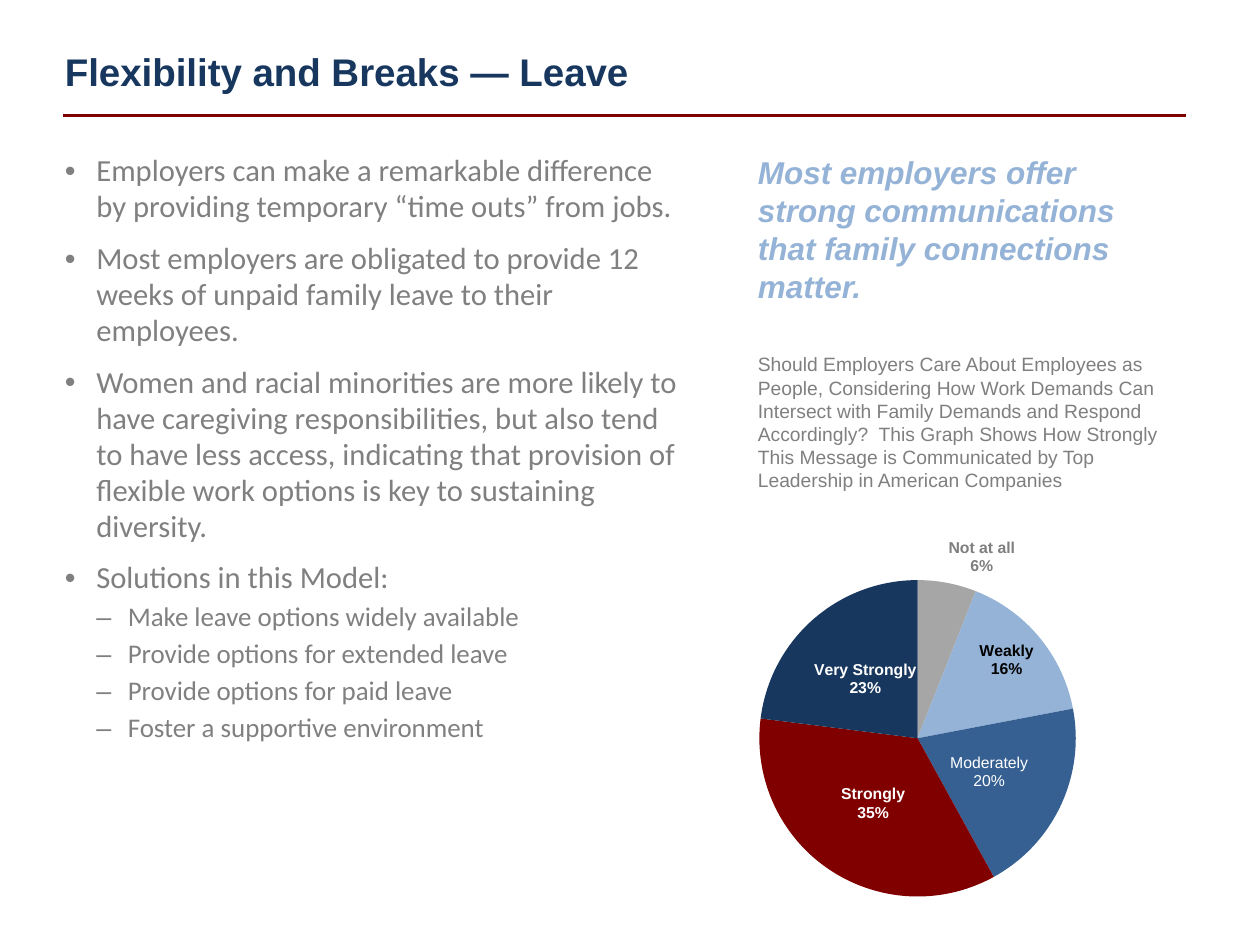
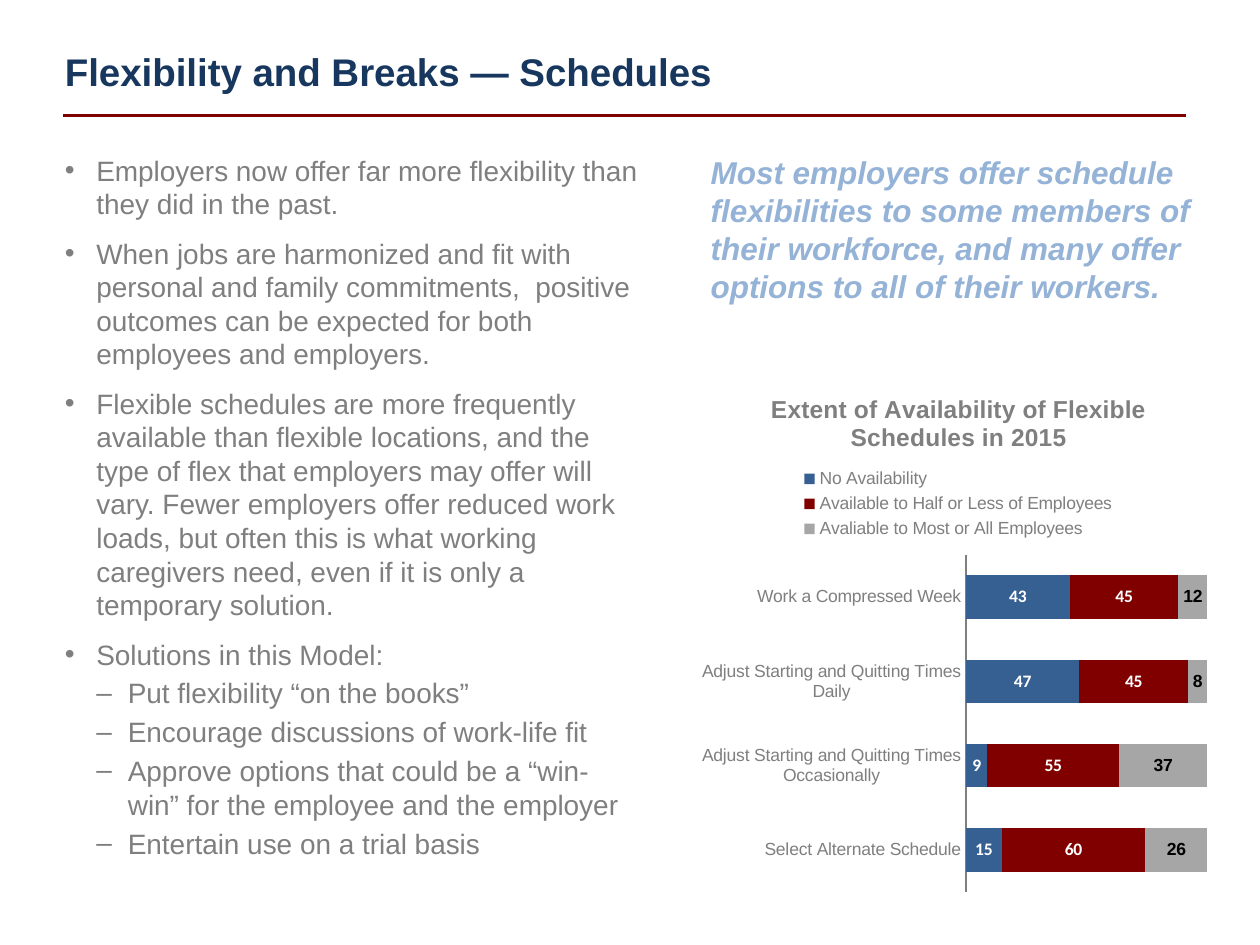
from lxml import etree
from pptx import Presentation
from pptx.chart.data import CategoryChartData
from pptx.dml.color import RGBColor
from pptx.enum.chart import (XL_CHART_TYPE, XL_LABEL_POSITION,
                             XL_LEGEND_POSITION, XL_TICK_MARK)
from pptx.enum.shapes import MSO_CONNECTOR
from pptx.oxml.ns import qn
from pptx.util import Pt

PIE = XL_CHART_TYPE.PIE
STACKED_BARS = XL_CHART_TYPE.BAR_STACKED_100
INSIDE_END = XL_LABEL_POSITION.INSIDE_END
OUTSIDE_END = XL_LABEL_POSITION.OUTSIDE_END
CENTER = XL_LABEL_POSITION.CENTER
LEGEND_TOP = XL_LEGEND_POSITION.TOP
NO_TICK = XL_TICK_MARK.NONE
STRAIGHT = MSO_CONNECTOR.STRAIGHT

NAVY, BLUE, PALE_BLUE = "17375E", "376092", "95B3D7"
MAROON, SILVER, GREY = "800000", "A6A6A6", "7F7F7F"
BODY_GREY, WHITE, BLACK = "808080", "FFFFFF", "000000"

INDENT = 18
BULLETS = ("•", "–")
SPACE_BEFORE = (9, 3)

LEAVE_POINTS = [
    (0, "Employers can make a remarkable difference by providing temporary “time outs” from jobs."),
    (0, "Most employers are obligated to provide 12 weeks of unpaid family leave to their employees."),
    (0, "Women and racial minorities are more likely to have caregiving responsibilities, but also "
        "tend to have less access, indicating that provision of flexible work options is key to "
        "sustaining diversity."),
    (0, "Solutions in this Model:"),
    (1, "Make leave options widely available"),
    (1, "Provide options for extended leave"),
    (1, "Provide options for paid leave"),
    (1, "Foster a supportive environment"),
]
SCHEDULE_POINTS = [
    (0, "Employers now offer far more flexibility than they did in the past."),
    (0, "When jobs are harmonized and fit with personal and family commitments,  positive outcomes "
        "can be expected for both employees and employers."),
    (0, "Flexible schedules are more frequently available than flexible locations, and the type of "
        "flex that employers may offer will vary. Fewer employers offer reduced work loads, but "
        "often this is what working caregivers need, even if it is only a temporary solution."),
    (0, "Solutions in this Model:"),
    (1, "Put flexibility “on the books”"),
    (1, "Encourage discussions of work-life fit"),
    (1, "Approve options that could be a “win-win” for the employee and the employer"),
    (1, "Entertain use on a trial basis"),
]
SURVEY_QUESTION = (
    "Should Employers Care About Employees as People, Considering How Work Demands Can Intersect "
    "with Family Demands and Respond Accordingly?  This Graph Shows How Strongly This Message is "
    "Communicated by Top Leadership in American Companies")

# Answer, percent, slice colour, label colour, bold label, label position
ANSWERS = [
    ("Not at all", 6, SILVER, GREY, True, OUTSIDE_END),
    ("Weakly", 16, PALE_BLUE, BLACK, True, INSIDE_END),
    ("Moderately", 20, BLUE, WHITE, False, CENTER),
    ("Strongly", 35, MAROON, WHITE, True, CENTER),
    ("Very Strongly", 23, NAVY, WHITE, True, CENTER),
]
SCHEDULE_TYPES = [
    "Select Alternate Schedule",
    "Adjust Starting and Quitting Times Occasionally",
    "Adjust Starting and Quitting Times Daily",
    "Work a Compressed Week",
]
# Series name, values, bar colour, label colour, label font
AVAILABILITY = [
    ("No Availability", (15, 9, 47, 43), BLUE, WHITE, "Calibri"),
    ("Available to Half or Less of Employees", (60, 55, 45, 45), MAROON, WHITE, "Calibri"),
    ("Avaliable to Most or All Employees", (26, 37, 8, 12), SILVER, BLACK, "Arial"),
]


def rgb(color):
    return RGBColor.from_string(color)


def fill(target, color):
    target.format.fill.solid()
    target.format.fill.fore_color.rgb = rgb(color)


def style_font(font, size, color, name="Arial", bold=False, italic=False):
    font.size, font.name = Pt(size), name
    font.bold, font.italic = bold, italic
    font.color.rgb = rgb(color)


def add_run(paragraph, text, *style, **options):
    run = paragraph.add_run()
    run.text = text
    style_font(run.font, *style, **options)


def add_frame(slide, box):
    frame = slide.shapes.add_textbox(*map(Pt, box)).text_frame
    frame.word_wrap = True
    return frame


def add_text(slide, box, text, *style, **options):
    add_run(add_frame(slide, box).paragraphs[0], text, *style, **options)


def add_title(slide, text):
    """Title with the rule beneath it."""
    add_text(slide, (30, 24, 642, 34), text, 22, NAVY, bold=True)
    rule = slide.shapes.add_connector(STRAIGHT, Pt(36), Pt(66), Pt(678), Pt(66))
    rule.line.color.rgb = rgb(MAROON)
    rule.line.width = Pt(2)
    etree.SubElement(rule._element.spPr, qn("a:effectLst"))


def add_callout(slide, left, width, text):
    add_text(slide, (left, 84, width, 94), text, 18, PALE_BLUE, bold=True, italic=True)


def add_bullets(slide, box, points, sizes, color, font_name, line_spacing=None):
    """Two-level list; sizes holds the text size of each level."""
    frame = add_frame(slide, box)
    for number, (level, text) in enumerate(points):
        paragraph = frame.add_paragraph() if number else frame.paragraphs[0]
        paragraph.level = level
        paragraph.space_before = Pt(SPACE_BEFORE[level] if number else 0)
        paragraph.line_spacing = line_spacing
        properties = paragraph._p.get_or_add_pPr()
        properties.set("marL", str(Pt(INDENT * (level + 1))))
        properties.set("indent", str(-Pt(INDENT)))
        etree.SubElement(properties, qn("a:buFont")).set("typeface", "Arial")
        etree.SubElement(properties, qn("a:buChar")).set("char", BULLETS[level])
        add_run(paragraph, text, sizes[level], color, font_name)


def place_chart_part(part, bounds, after=None, inner=False):
    """Fix a chart part at fractions (x, y, w, h) of the chart."""
    present = part.find(qn("c:layout"))
    if present is not None:
        part.remove(present)
    layout = etree.Element(qn("c:layout"))
    manual = etree.SubElement(layout, qn("c:manualLayout"))
    settings = [("layoutTarget", "inner")] if inner else []
    settings += [("xMode", "edge"), ("yMode", "edge"), *zip("xywh", bounds)]
    for tag, value in settings:
        etree.SubElement(manual, qn("c:" + tag)).set("val", str(value))
    if after:
        part.find(qn(after)).addnext(layout)
    else:
        part.insert(0, layout)


def add_chart(slide, kind, box, categories, series, plot_bounds):
    data = CategoryChartData()
    data.categories = categories
    for name, values in series:
        data.add_series(name, values)
    chart = slide.shapes.add_chart(kind, *map(Pt, box), data).chart
    style_font(chart.font, 10, BLACK, "Calibri")
    place_chart_part(chart._chartSpace.chart.plotArea, plot_bounds, inner=True)
    return chart


def add_answer_pie(slide):
    names, percents, *_ = zip(*ANSWERS)
    chart = add_chart(slide, PIE, (402, 294, 266, 246), names,
                      [("Series 1", percents)], (0.12, 0.15, 0.68, 0.74))
    chart.has_title = chart.has_legend = False
    points = chart.plots[0].series[0].points
    for number, (_, _, color, label_color, bold, position) in enumerate(ANSWERS):
        fill(points[number], color)
        label = points[number].data_label
        style_font(label.font, 9, label_color, bold=bold)
        label.position = position
    shown = {"showVal": "0", "showCatName": "1", "showPercent": "1"}
    for label in chart._chartSpace.iter(qn("c:dLbl")):
        for tag, value in shown.items():
            label.find(qn("c:" + tag)).set("val", value)
        separator = etree.Element(qn("c:separator"))
        separator.text = "\n"
        label.find(qn("c:showBubbleSize")).addnext(separator)


def add_availability_bars(slide):
    chart = add_chart(slide, STACKED_BARS, (396, 210, 300, 306), SCHEDULE_TYPES,
                      [row[:2] for row in AVAILABILITY], (0.52, 0.35, 0.46, 0.63))
    chart.has_title = True
    add_run(chart.chart_title.text_frame.paragraphs[0],
            "Extent of Availability of Flexible Schedules in 2015", 14, GREY, bold=True)
    place_chart_part(chart.chart_title._element, (0.14, 0.04), after="c:tx")

    chart.has_legend = True
    legend = chart.legend
    legend.position = LEGEND_TOP
    legend.include_in_layout = False
    style_font(legend.font, 10, GREY)
    place_chart_part(legend._element, (0.2, 0.18, 0.61, 0.15), after="c:legendPos")

    axis = chart.category_axis
    axis.major_tick_mark = axis.minor_tick_mark = NO_TICK
    axis.format.line.color.rgb = rgb(GREY)
    style_font(axis.tick_labels.font, 10, GREY)
    chart.value_axis.visible = False
    chart.value_axis.has_major_gridlines = False

    plot = chart.plots[0]
    plot.gap_width, plot.overlap = 95, 100
    for series, (_, _, color, label_color, font_name) in zip(plot.series, AVAILABILITY):
        fill(series, color)
        labels = series.data_labels
        labels.show_value = True
        labels.number_format, labels.number_format_is_linked = "0", False
        style_font(labels.font, 10, label_color, font_name, bold=True)


def build_leave_slide(slide):
    add_title(slide, "Flexibility and Breaks — Leave")
    add_bullets(slide, (30, 84, 366, 414), LEAVE_POINTS, (17.5, 15.4),
                BODY_GREY, "Calibri", line_spacing=0.98)
    add_callout(slide, 426, 234,
                "Most employers offer strong communications that family connections matter.")
    add_text(slide, (426, 198, 252, 101), SURVEY_QUESTION, 11, GREY)
    add_answer_pie(slide)


def build_schedules_slide(slide):
    add_title(slide, "Flexibility and Breaks — Schedules")
    add_bullets(slide, (30, 84, 342, 444), SCHEDULE_POINTS, (16, 16), GREY, "Arial")
    add_callout(slide, 399, 321,
                "Most employers offer schedule flexibilities to some members of their workforce, "
                "and many offer options to all of their workers.")
    add_availability_bars(slide)


def main():
    presentation = Presentation()
    presentation.slide_width, presentation.slide_height = Pt(720), Pt(540)
    blank = presentation.slide_layouts[6]
    for build in (build_leave_slide, build_schedules_slide):
        build(presentation.slides.add_slide(blank))
    presentation.save("out.pptx")


if __name__ == "__main__":
    main()
